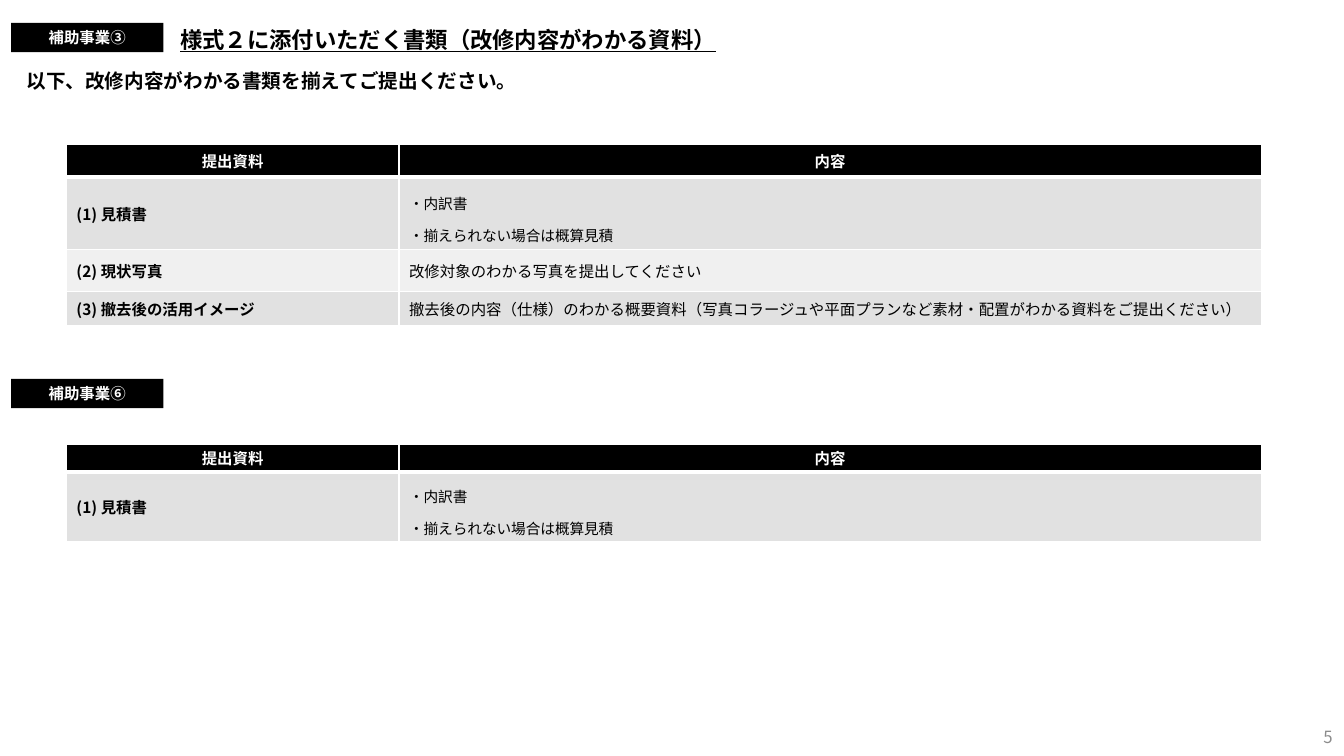
from lxml.etree import SubElement as Sub
from pptx import Presentation
from pptx.dml.color import RGBColor as RGB
from pptx.enum.shapes import MSO_SHAPE as Shape
from pptx.enum.text import MSO_ANCHOR as Anchor, PP_ALIGN as Align
from pptx.oxml.ns import qn
from pptx.util import Pt

FACE = "Noto Sans CJK JP"
HUES = {"black": "000000", "white": "FFFFFF", "dark": "E1E1E1",
        "light": "F0F0F0", "gray": "8C8C8C"}

HEAD = ("提出資料", ["内容"])
QUOTE = ("(1) 見積書", ["・内訳書", "・揃えられない場合は概算見積"])
PHOTO = ("(2) 現状写真", ["改修対象のわかる写真を提出してください\u3000"])
IMAGE = ("(3) 撤去後の活用イメージ",
         ["撤去後の内容（仕様）のわかる概要資料（写真コラージュや平面プランなど素材・配置がわかる資料をご提出ください）"])
LEFT = 47.4
COLS = [237.6, 616]
TABLES = [
    {"top": 103, "pad": 3, "highs": [23.5, 52, 29.5, 24.5],
     "rows": [HEAD, QUOTE, PHOTO, IMAGE]},
    {"top": 317.2, "pad": 1.5, "highs": [20, 49.5], "rows": [HEAD, QUOTE]},
]

TAG = {"left": 8, "wide": 108.7, "high": 20.9}
TAGS = [("補助事業③", 16.4), ("補助事業⑥", 270.6)]

TITLE = "様式２に添付いただく書類（改修内容がわかる資料）"
LEAD = "以下、改修内容がわかる書類を揃えてご提出ください。"
PAGE = "5"


def style(para, text, size, hue, bold=True, align=Align.LEFT):
    para.text = text
    para.alignment = align
    font = para.font
    font.name, font.size, font.bold = FACE, Pt(size), bold
    font.color.rgb = RGB.from_string(HUES[hue])
    Sub(font._element, qn("a:ea"), typeface=FACE)


def paint(fill, hue):
    fill.solid()
    fill.fore_color.rgb = RGB.from_string(HUES[hue])


def add_edges(cell, row):
    thick = {(0, "lnB"), (1, "lnT")}
    for side in ("lnL", "lnR", "lnT", "lnB"):
        width = 3 if (row, side) in thick else 1
        line = Sub(cell._tc.get_or_add_tcPr(), qn("a:" + side), w=str(Pt(width)))
        solid = Sub(line, qn("a:solidFill"))
        Sub(solid, qn("a:srgbClr"), val=HUES["white"])


def fill_cell(cell, row, col, lines, pad):
    head, multi = row == 0, len(lines) > 1
    if head:
        back, ink, align = "black", "white", Align.CENTER
    else:
        back, ink, align = "dark" if row % 2 else "light", "black", Align.LEFT
    add_edges(cell, row)
    paint(cell.fill, back)
    cell.vertical_anchor = Anchor.MIDDLE
    cell.margin_top = cell.margin_bottom = Pt(pad)
    frame = cell.text_frame
    for i, text in enumerate(lines):
        para = frame.add_paragraph() if i else frame.paragraphs[0]
        style(para, text, 10.5 if multi else 11, ink, head or col == 0, align)
        if multi:
            para.line_spacing = 1.5


def add_grid(slide, top, pad, highs, rows):
    grid = slide.shapes.add_table(len(rows), len(COLS), Pt(LEFT), Pt(top),
                                  Pt(sum(COLS)), Pt(sum(highs))).table
    for col, wide in zip(grid.columns, COLS):
        col.width = Pt(wide)
    for r, (high, (label, lines)) in enumerate(zip(highs, rows)):
        grid.rows[r].height = Pt(high)
        for c, part in enumerate(([label], lines)):
            fill_cell(grid.cell(r, c), r, c, part, pad)


def add_tag(slide, text, top):
    tag = slide.shapes.add_shape(Shape.RECTANGLE, Pt(TAG["left"]), Pt(top),
                                 Pt(TAG["wide"]), Pt(TAG["high"]))
    tag.shadow.inherit = False
    paint(tag.fill, "black")
    tag.line.fill.background()
    frame = tag.text_frame
    frame.vertical_anchor = Anchor.MIDDLE
    frame.margin_top = frame.margin_bottom = 0
    style(frame.paragraphs[0], text, 11, "white", align=Align.CENTER)


def add_text(slide, text, box, size, hue="black", bold=True,
             align=Align.LEFT, anchor=Anchor.TOP):
    frame = slide.shapes.add_textbox(*map(Pt, box)).text_frame
    frame.word_wrap = True
    frame.vertical_anchor = anchor
    para = frame.paragraphs[0]
    style(para, text, size, hue, bold, align)
    return para


def main():
    deck = Presentation()
    deck.slide_width, deck.slide_height = Pt(960), Pt(540)
    slide = deck.slides.add_slide(deck.slide_layouts[6])
    for table in TABLES:
        add_grid(slide, **table)
    for text, top in TAGS:
        add_tag(slide, text, top)
    title = add_text(slide, TITLE, (121.7, 15.1, 786, 26.6), 16)
    title.font.underline = True
    add_text(slide, LEAD, (11.8, 45.4, 468, 24.5), 14)
    add_text(slide, PAGE, (743, 511.9, 216, 28.8), 12, "gray", False,
             Align.RIGHT, Anchor.MIDDLE)
    deck.save("out.pptx")


if __name__ == "__main__":
    main()
